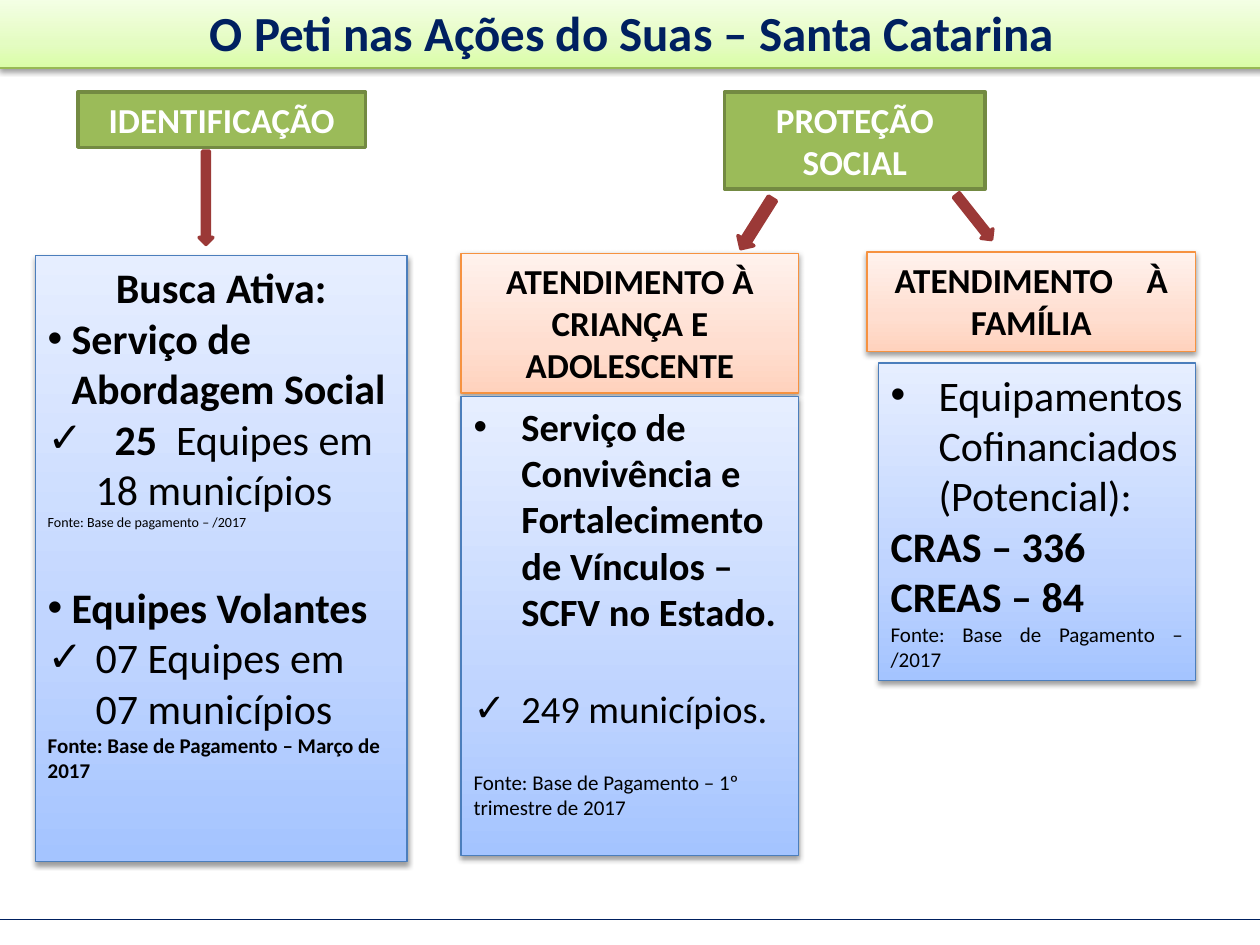
from copy import deepcopy
from dataclasses import dataclass

from lxml import etree
from pptx import Presentation
from pptx import util as u
from pptx.dml.color import RGBColor
from pptx.enum import shapes, text
from pptx.oxml.ns import qn


@dataclass(frozen=True)
class Theme:
    """Colours, font and type sizes of the slide."""
    font: str = "Calibri"
    white: str = "FFFFFF"
    black: str = "000000"
    navy: str = "002060"
    red: str = "9B3937"
    green: tuple = ("9BBB59", "738A42", 2, False)
    banner: tuple = (("DAFDA7", "E4FCC2", "F5FFE7"), "98B955", 0.75, True)
    blue: tuple = (("A4C4FF", "BFD4FF", "E6EEFF"), "4B7EBC", 0.75, True)
    orange: tuple = (("FFD2BD", "FFDED0", "FFF2ED"), "F69240", 0.75, True)
    title: int = 28
    body: int = 24
    service: int = 22
    heading: int = 20
    source: int = 12
    note: int = 8


THEME = Theme()
COLUMNS, ROWS = 100, 75
CELL = u.Inches(0.1)
STOPS = (0, 0.35, 1)
BULLET, CHECK = "•", "✓"
CENTER, JUSTIFY = text.PP_ALIGN.CENTER, text.PP_ALIGN.JUSTIFY


def assign(target, values):
    """Set each named attribute of the target."""
    for name, value in values.items():
        setattr(target, name, value)


def place(shape, box):
    """Move a shape to a box of grid columns and rows."""
    assign(shape, dict(zip(("left", "top", "width", "height"),
                           (round(length * CELL) for length in box))))


def within(box, offset):
    """Turn a box relative to a region into a slide box."""
    left, top, width, height = offset
    return box[0] + left, box[1] + top, width, height


def paint(shape, style):
    """Apply a fill, outline and optional drop shadow."""
    fill, line, weight, shadowed = style
    properties = shape._element.spPr
    if isinstance(fill, str):
        shape.fill.solid()
        shape.fill.fore_color.rgb = RGBColor.from_string(fill)
    else:
        shape.fill.gradient()
        shape.fill.gradient_angle = 90
        stop_list = properties.find(".//" + qn("a:gsLst"))
        stop_list.append(deepcopy(stop_list[0]))
        for stop, position, color in zip(shape.fill.gradient_stops, STOPS, fill):
            stop.position = position
            stop.color.rgb = RGBColor.from_string(color)
    shape.line.color.rgb = RGBColor.from_string(line)
    shape.line.width = u.Pt(weight)
    shape.shadow.inherit = False
    if shadowed:
        effects = properties.find(qn("a:effectLst"))
        shadow = etree.SubElement(effects, qn("a:outerShdw"), blurRad="40000",
                                  dist="20000", dir="5400000", rotWithShape="0")
        color = etree.SubElement(shadow, qn("a:srgbClr"), val=THEME.black)
        etree.SubElement(color, qn("a:alpha"), val="38000")


def item(*runs, size=THEME.body, bold=True, align=text.PP_ALIGN.LEFT,
         bullet=None, indent=0.38, before=0):
    """Describe one paragraph; a run is a string or a (string, bold) pair."""
    pairs = [run if isinstance(run, tuple) else (run, bold) for run in runs]
    return pairs, size, align, bullet, indent, before


def write(shape, items, color=THEME.black):
    """Fill a shape with the described paragraphs."""
    frame = shape.text_frame
    assign(frame, {"word_wrap": True, "auto_size": text.MSO_AUTO_SIZE.NONE,
                   "vertical_anchor": text.MSO_ANCHOR.TOP})
    for index, (pairs, size, align, bullet, indent, before) in enumerate(items):
        paragraph = frame.add_paragraph() if index else frame.paragraphs[0]
        assign(paragraph, {"alignment": align, "space_before": u.Pt(before)})
        if bullet:
            properties = paragraph._p.get_or_add_pPr()
            properties.set("marL", str(u.Inches(indent)))
            properties.set("indent", str(-u.Inches(indent)))
            etree.SubElement(properties, qn("a:buFont"), typeface="Arial")
            etree.SubElement(properties, qn("a:buChar"), char=bullet)
        for words, bold in pairs:
            run = paragraph.add_run()
            run.text = words
            assign(run.font, {"name": THEME.font, "size": u.Pt(size), "bold": bold})
            run.font.color.rgb = RGBColor.from_string(color)


def panel(slide, box, style, items=(), color=THEME.black):
    """Add a painted rectangle with text."""
    shape = slide.shapes.add_shape(shapes.MSO_SHAPE.RECTANGLE, 0, 0, 0, 0)
    place(shape, box)
    paint(shape, style)
    write(shape, items, color)


def heading(slide, box, words, style, color=THEME.black):
    """Add a panel with a centred heading."""
    panel(slide, box, style, [item(words, size=THEME.heading, align=CENTER)], color)


def arrow(slide, box, rotation=0):
    """Add a red block arrow."""
    shape = slide.shapes.add_shape(shapes.MSO_SHAPE.DOWN_ARROW, 0, 0, 0, 0)
    place(shape, box)
    shape.rotation = rotation
    paint(shape, (THEME.red, THEME.red, 2, False))


def banner(slide, box):
    """Format the title as a full-width band in front of the frame."""
    title = slide.shapes.title
    place(title, box)
    paint(title, THEME.banner)
    write(title, [item("O Peti nas Ações do Suas – Santa Catarina",
                       size=THEME.title, align=CENTER)], THEME.navy)
    title._element.getparent().append(title._element)


def identification(slide, box):
    """Place the identification heading, its arrow and the active search list."""
    heading(slide, within(box, (3.4, 0, 22.8, 4.4)), "IDENTIFICAÇÃO",
            THEME.green, THEME.white)
    arrow(slide, within(box, (13, 4.7, 1.1, 7.4)))
    panel(slide, within(box, (0, 13, box[2], box[3] - 13)), THEME.blue, [
        item("Busca Ativa:", align=CENTER),
        item("Serviço de Abordagem Social", bullet=BULLET, indent=0.19),
        item("  25 ", (" Equipes em 18 municípios", False), bullet=CHECK),
        item("Fonte: Base de pagamento – /2017", size=THEME.note, bold=False),
        item("Equipes Volantes", bullet=BULLET, indent=0.19, before=29),
        item("07 Equipes em 07 municípios", bold=False, bullet=CHECK),
        item("Fonte: Base de Pagamento – Março de 2017", size=THEME.source),
    ])


def protection(slide, box):
    """Place the social protection heading and the arrows to its branches."""
    heading(slide, within(box, (0, 0, box[2], 7.7)), "PROTEÇÃO SOCIAL",
            THEME.green, THEME.white)
    arrow(slide, within(box, (1.8, 8.1, 1.5, 4.7)), 32.2)
    arrow(slide, within(box, (19.2, 7.7, 1.2, 4.5)), 321.6)


def children(slide, box):
    """Place the branch on care for children and adolescents."""
    heading(slide, within(box, (0, 0, box[2], 11.1)),
            "ATENDIMENTO À CRIANÇA E ADOLESCENTE", THEME.orange)
    panel(slide, within(box, (0, 11.4, box[2], box[3] - 11.4)), THEME.blue, [
        item("Serviço de Convivência e Fortalecimento de Vínculos – SCFV no Estado.",
             size=THEME.service, bullet=BULLET),
        item("249 municípios.", size=THEME.service, bold=False,
             bullet=CHECK, before=29),
        item("Fonte: Base de Pagamento – 1º trimestre de 2017",
             size=THEME.source, bold=False, before=22),
    ])


def family(slide, box):
    """Place the branch on care for families."""
    heading(slide, within(box, (0, 0, box[2], 7.9)),
            "ATENDIMENTO \tÀ FAMÍLIA", THEME.orange)
    panel(slide, within(box, (0.9, 8.8, box[2] - 0.9, box[3] - 8.8)), THEME.blue, [
        item("Equipamentos Cofinanciados (Potencial):", bold=False,
             align=JUSTIFY, bullet=BULLET),
        item("CRAS – 336", align=JUSTIFY),
        item("CREAS – 84", align=JUSTIFY),
        item("Fonte: Base de Pagamento – /2017", size=THEME.source,
             bold=False, align=JUSTIFY),
    ])


def main():
    """Build and save the presentation."""
    presentation = Presentation()
    assign(presentation, {"slide_width": COLUMNS * CELL, "slide_height": ROWS * CELL})
    slide = presentation.slides.add_slide(presentation.slide_layouts[5])
    panel(slide, (-0.1, 5.1, 100.5, 67.9), (THEME.white, THEME.navy, 0.75, False))
    banner(slide, (-0.1, -0.3, 100.5, 5.7))
    identification(slide, (2.8, 7.3, 29.5, 61.1))
    children(slide, (36.6, 20.1, 26.8, 47.8))
    family(slide, (68.8, 20, 26.1, 34))
    protection(slide, (57.5, 7.3, 20.7, 12.8))
    presentation.save("out.pptx")


if __name__ == "__main__":
    main()
